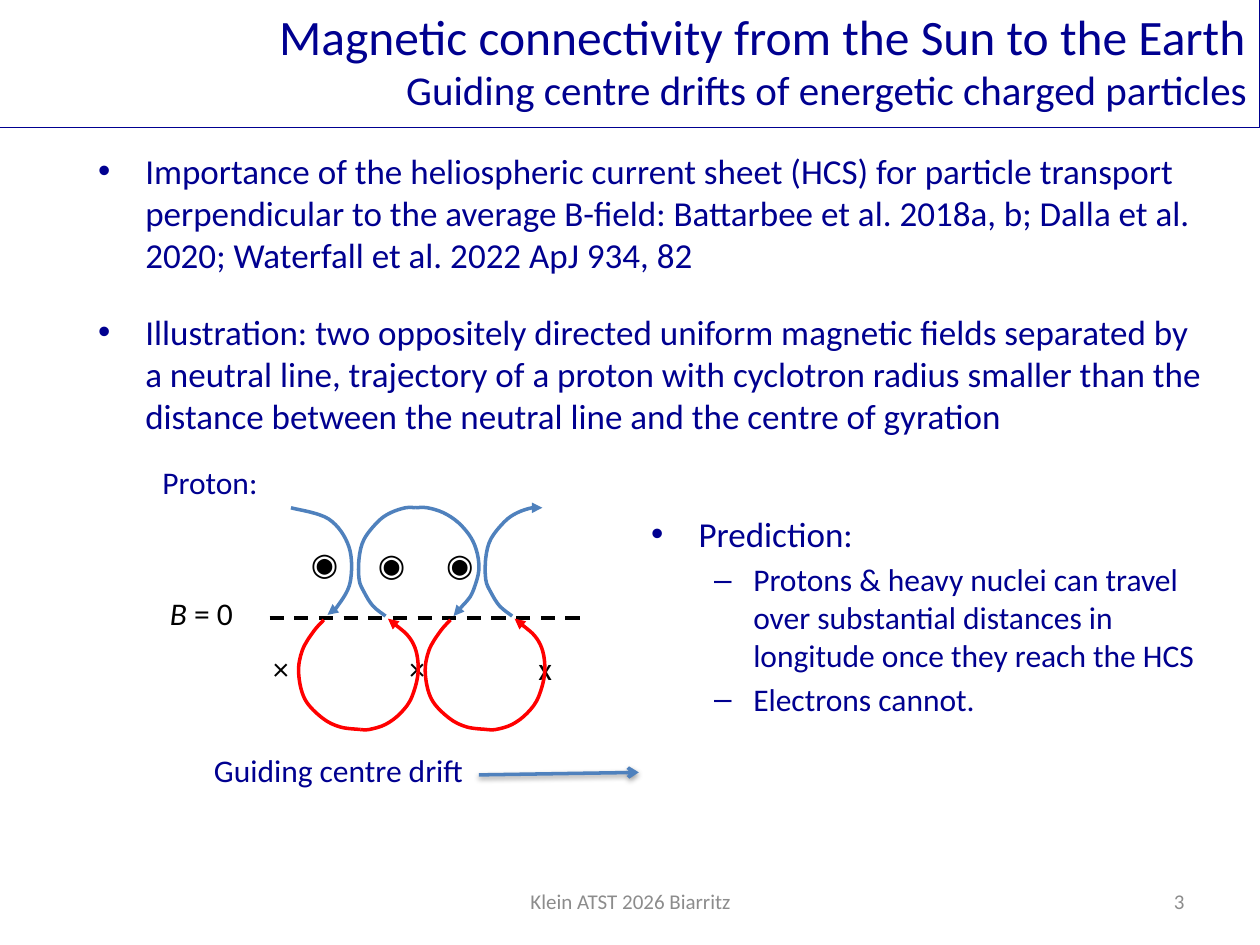
import dataclasses

import pptx
import pptx.dml.color
import pptx.enum.dml
import pptx.enum.shapes
import pptx.enum.text
import pptx.oxml
import pptx.oxml.ns
import pptx.util

ALIGN = pptx.enum.text.PP_ALIGN
ANCHOR = pptx.enum.text.MSO_ANCHOR
DASH = pptx.enum.dml.MSO_LINE.DASH
NS = pptx.oxml.ns.nsdecls("a")


@dataclasses.dataclass(frozen=True)
class Theme:
    navy: str = "000090"
    black: str = "000000"
    blue: str = "4F81BD"
    red: str = "FF0000"
    grey: str = "8C8C8C"
    font: str = "Calibri"
    symbol_font: str = "Arial"
    title: float = 28.3
    subtitle: float = 23.4
    body: float = 20
    label: float = 18
    footer: float = 12
    stroke: float = 2
    frame: float = 0.75


def add_xml(parent, xml):
    parent.append(pptx.oxml.parse_xml(xml))


def round_corners(sp):
    outline = sp._element.find(".//" + pptx.oxml.ns.qn("a:path"))
    points = [(int(pt.get("x")), int(pt.get("y")))
              for pt in outline.iter(pptx.oxml.ns.qn("a:pt"))]
    for segment in list(outline)[1:]:
        outline.remove(segment)
    ends = [points[0], *points, points[-1]]
    for a, b, c, d in zip(ends, ends[1:], ends[2:], ends[3:]):
        leave = [round(q + (r - p) / 6) for p, q, r in zip(a, b, c)]
        arrive = [round(q - (r - p) / 6) for p, q, r in zip(b, c, d)]
        pts = "".join(f'<a:pt x="{x}" y="{y}"/>' for x, y in (leave, arrive, c))
        add_xml(outline, f"<a:cubicBezTo {NS}>{pts}</a:cubicBezTo>")


class Builder:
    COLUMNS, ROWS = 100, 75

    def __init__(self, prs, theme):
        self.theme = theme
        self.s = prs.slides.add_slide(prs.slide_layouts[6])
        self.col = prs.slide_width / self.COLUMNS
        self.row = prs.slide_height / self.ROWS

    def place(self, x, y):
        return round(x * self.col), round(y * self.row)

    def color(self, name):
        return pptx.dml.color.RGBColor.from_string(getattr(self.theme, name))

    def stroke(self, sp, color, width="stroke", dash=None, head=None):
        sp.line.color.rgb = self.color(color)
        sp.line.width = pptx.util.Pt(getattr(self.theme, width))
        if dash:
            sp.line.dash_style = dash
        if head:
            add_xml(sp.line._ln, f'<a:tailEnd {NS} type="{head}"/>')

    def paragraph(self, tf, first, runs, size, color="navy", font="font", bullet=None,
                  indent=(0, 0), level=0, tabs=(), **formats):
        p = tf.paragraphs[0] if first else tf.add_paragraph()
        pPr = p._p.get_or_add_pPr()
        if bullet:
            pPr.set("marL", str(self.place(indent[0], 0)[0]))
            pPr.set("indent", str(self.place(indent[1], 0)[0]))
            add_xml(pPr, f'<a:buFont {NS} typeface="Arial"/>')
            add_xml(pPr, f'<a:buChar {NS} char="{bullet}"/>')
        if tabs:
            stops = "".join(f'<a:tab pos="{self.place(t, 0)[0]}" algn="l"/>' for t in tabs)
            add_xml(pPr, f"<a:tabLst {NS}>{stops}</a:tabLst>")
        for name, value in {"level": level, **formats}.items():
            setattr(p, name, value)
        for text, italic in [(runs, False)] if isinstance(runs, str) else runs:
            r = p.add_run()
            r.text = text
            r.font.color.rgb = self.color(color)
            style = {"name": getattr(self.theme, font), "italic": italic,
                     "size": pptx.util.Pt(getattr(self.theme, size))}
            for name, value in style.items():
                setattr(r.font, name, value)

    def fill_text(self, sp, paragraphs, anchor):
        tf = sp.text_frame
        for name, value in {"word_wrap": True, "vertical_anchor": anchor}.items():
            setattr(tf, name, value)
        for i, formats in enumerate(paragraphs):
            self.paragraph(tf, i == 0, **formats)

    def text(self, x, y, w, h, *paragraphs, anchor=ANCHOR.TOP):
        sp = self.s.shapes.add_textbox(*self.place(x, y), *self.place(w, h))
        self.fill_text(sp, paragraphs, anchor)

    def banner(self, x, y, w, h, *paragraphs):
        rect = pptx.enum.shapes.MSO_SHAPE.RECTANGLE
        sp = self.s.shapes.add_shape(rect, *self.place(x, y), *self.place(w, h))
        sp.shadow.inherit = False
        sp.fill.background()
        self.stroke(sp, "navy", "frame")
        self.fill_text(sp, paragraphs, ANCHOR.TOP)

    def line(self, start, end, color, shadow="", **style):
        straight = pptx.enum.shapes.MSO_CONNECTOR.STRAIGHT
        sp = self.s.shapes.add_connector(straight, *self.place(*start), *self.place(*end))
        self.stroke(sp, color, **style)
        add_xml(sp._element.spPr, f"<a:effectLst {NS}>{shadow}</a:effectLst>")

    def curve(self, points, color, dx=0, head=None):
        start, *rest = [self.place(x + dx, y) for x, y in points]
        builder = self.s.shapes.build_freeform(*start)
        builder.add_line_segments(rest, close=False)
        sp = builder.convert_to_shape()
        round_corners(sp)
        sp.shadow.inherit = False
        sp.fill.background()
        self.stroke(sp, color, head=head)


ENTRY = [(23.1, 40.3), (26.1, 41.2), (27.7, 43.4), (27.8, 46.2), (26.8, 48.1), (26, 48.8)]
LOWER_LEFT = [(25.7, 49.2), (24.9, 50.1), (24, 51.6), (23.7, 53.4), (24.2, 55.5),
              (25.6, 57), (27, 57.7), (28.6, 57.9)]
LOWER_RIGHT = [(28.6, 57.9), (29.3, 57.9), (30.6, 57.5), (31.8, 56.6), (32.7, 55.3),
               (33.2, 53.1), (32.7, 50.9), (30.8, 49.1)]
UPPER_LEFT = [(30.6, 48.9), (29.6, 48.1), (28.9, 47), (28.5, 46), (28.5, 44.3),
              (28.9, 42.8), (30, 41.4), (31, 40.7), (32.2, 40.3), (33, 40.3)]
UPPER_RIGHT = [(33, 40.3), (33.9, 40.3), (35.2, 40.7), (36.4, 41.5), (37.4, 42.7),
               (37.9, 44), (38, 45.3), (37.7, 46.5), (37.3, 47.4), (36.7, 48.1), (36, 48.9)]
DRIFT = 10.05
SHADOW = ('<a:outerShdw blurRad="40000" dist="20000" dir="5400000" rotWithShape="0">'
          '<a:srgbClr val="000000"><a:alpha val="38000"/></a:srgbClr></a:outerShdw>')


def main():
    prs = pptx.Presentation()
    prs.slide_width = pptx.util.Inches(10)
    prs.slide_height = pptx.util.Inches(7.5)
    b = Builder(prs, Theme())
    label = {"size": "label"}
    symbols = {**label, "color": "black"}
    point = {"size": "body", "bullet": "•", "indent": (3.75, -3.75)}
    subpoint = {"size": "label", "bullet": "–", "indent": (8.1, -3.1), "level": 1,
                "space_before": pptx.util.Pt(3.3)}
    footer = {"size": "footer", "color": "grey"}

    b.line((21.4, 49.05), (46.4, 49.05), "black", dash=DASH)
    b.text(12.5, 46.65, 8.9, 4, {"runs": [("B ", True), ("= 0", False)], **symbols})
    b.text(20.7, 51.05, 30, 4, {"runs": "×\t×\tx", "tabs": (10.8, 21.05), **symbols})
    b.text(15.4, 42.8, 34.6, 4, {"runs": "◉\t◉", "bullet": "◉", "indent": (13.6, -5.3),
                                 "tabs": (8.5,), "font": "symbol_font", **symbols})
    b.text(6.8, 11.35, 90, 26.8,
           {"runs": "Importance of the heliospheric current sheet (HCS) for particle transport "
                    "perpendicular to the average B-field: Battarbee et al. 2018a, b; "
                    "Dalla et al. 2020; Waterfall et al. 2022 ApJ 934, 82", **point},
           {"runs": "Illustration: two oppositely directed uniform magnetic fields separated by "
                    "a neutral line, trajectory of a proton with cyclotron radius smaller than "
                    "the distance between the neutral line and the centre of gyration",
            "space_before": pptx.util.Pt(20), **point})

    b.curve(ENTRY, "blue", head="triangle")
    for dx, head in ((0, None), (DRIFT, "triangle")):
        b.curve(LOWER_LEFT, "red", dx)
        b.curve(LOWER_RIGHT, "red", dx, "triangle")
        b.curve(UPPER_LEFT, "blue", dx, head)
    b.curve(UPPER_RIGHT, "blue", head="triangle")

    b.text(11.9, 36.25, 11.2, 4, {"runs": "Proton:", **label})
    b.text(16, 59.1, 25.6, 4, {"runs": "Guiding centre drift", **label})
    b.line((38, 61.5), (50.7, 61.3), "blue", SHADOW, head="arrow")
    b.banner(-0.05, -0.05, 100, 10.2,
             {"runs": "Magnetic connectivity from the Sun to the Earth", "size": "title",
              "alignment": ALIGN.RIGHT},
             {"runs": "Guiding centre drifts of energetic charged particles",
              "size": "subtitle", "alignment": ALIGN.RIGHT})
    b.text(50.7, 40.2, 46.1, 19.4,
           {"runs": "Prediction:", **point},
           {"runs": "Protons & heavy nuclei can travel over substantial distances in "
                    "longitude once they reach the HCS", **subpoint},
           {"runs": "Electrons cannot.", **subpoint})
    b.text(34.2, 69.5, 31.7, 4,
           {"runs": "Klein ATST 2026 Biarritz", "alignment": ALIGN.CENTER, **footer},
           anchor=ANCHOR.MIDDLE)
    b.text(71.7, 69.5, 23.3, 4, {"runs": "3", "alignment": ALIGN.RIGHT, **footer},
           anchor=ANCHOR.MIDDLE)
    prs.save("out.pptx")


if __name__ == "__main__":
    main()
